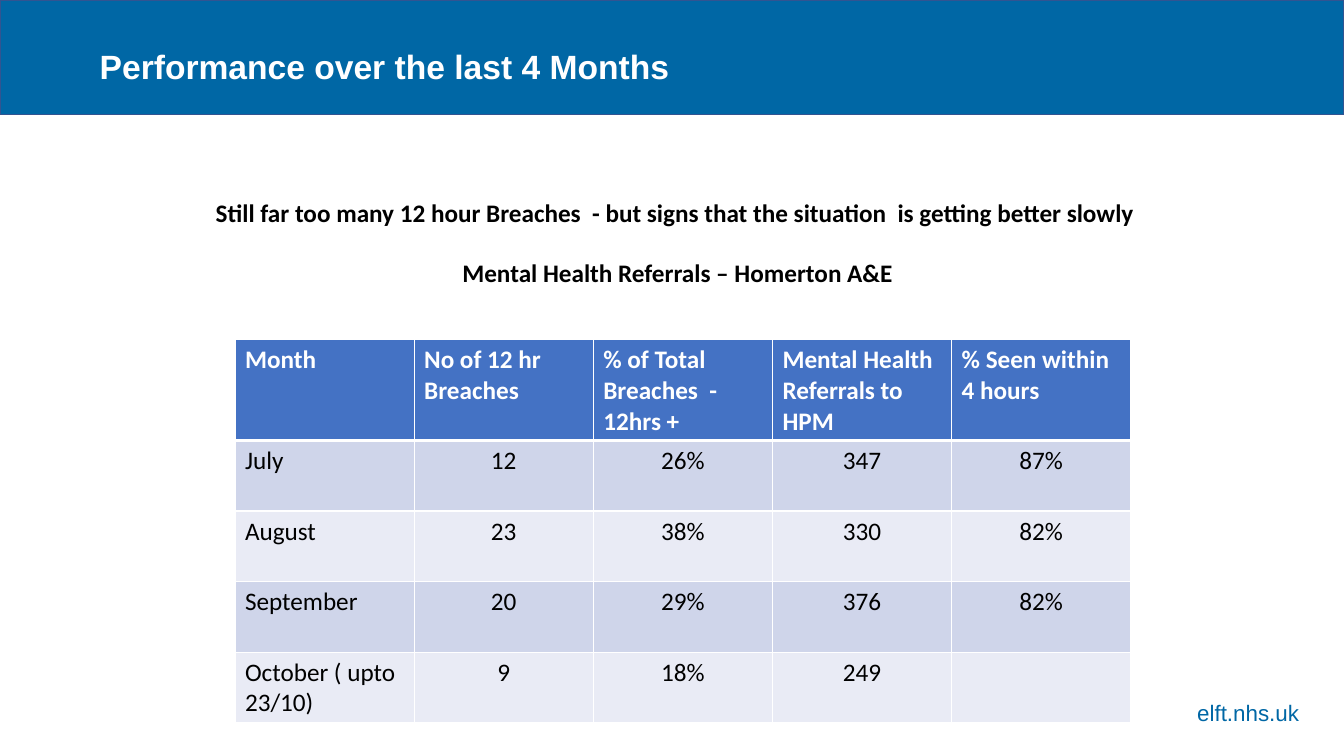
from lxml import etree
from pptx import Presentation
from pptx.dml.color import RGBColor
from pptx.enum.shapes import MSO_SHAPE
from pptx.enum.text import MSO_ANCHOR, PP_ALIGN
from pptx.oxml.ns import qn
from pptx.util import Pt

RECT = MSO_SHAPE.RECTANGLE
TOP = MSO_ANCHOR.TOP
LEFT, CENTER, RIGHT = PP_ALIGN.LEFT, PP_ALIGN.CENTER, PP_ALIGN.RIGHT

BLUE = RGBColor(0x00, 0x67, 0xA5)
BAND_EDGE = RGBColor(0x32, 0x54, 0x91)
HEADER_BLUE = RGBColor(0x44, 0x72, 0xC4)
ROW_FILLS = (RGBColor(0xCF, 0xD5, 0xEA), RGBColor(0xE9, 0xEB, 0xF5))
WHITE = RGBColor(0xFF, 0xFF, 0xFF)
BLACK = RGBColor(0x00, 0x00, 0x00)

SLIDE_W, SLIDE_H = 960, 540
COL_W, HEADER_H, ROW_H = 128, 72, 50.4
ROWS = [
    ("Month", "No of 12 hr Breaches", "% of Total Breaches  - 12hrs +",
     "Mental Health Referrals to HPM", "% Seen within 4 hours"),
    ("July", "12", "26%", "347", "87%"),
    ("August", "23", "38%", "330", "82%"),
    ("September", "20", "29%", "376", "82%"),
    ("October ( upto 23/10)", "9", "18%", "249", ""),
]


def write(p, text, size, color, font="Calibri", bold=False, align=LEFT):
    p.alignment = align
    r = p.add_run()
    r.text = text
    r.font.name = font
    r.font.size = Pt(size)
    r.font.bold = bold
    r.font.color.rgb = color


def add_band(slide):
    """Add the blue header band behind everything else."""
    sp = slide.shapes.add_shape(RECT, 0, 0, Pt(SLIDE_W), Pt(82))
    sp.shadow.inherit = False
    sp.fill.solid()
    sp.fill.fore_color.rgb = BLUE
    sp.line.color.rgb = BAND_EDGE
    sp.line.width = Pt(1)
    slide.shapes._spTree.insert(2, sp._element)


def set_title(slide, text):
    title = slide.shapes.title
    title.left, title.top, title.width, title.height = Pt(64), Pt(29.5), Pt(502), Pt(50.4)
    tf = title.text_frame
    tf.vertical_anchor = TOP
    write(tf.paragraphs[0], text, 24, WHITE, "Arial", True)


def add_text_box(slide, x, y, w, h):
    tf = slide.shapes.add_textbox(Pt(x), Pt(y), Pt(w), Pt(h)).text_frame
    tf.word_wrap = True
    return tf


def set_borders(cell, top, bottom):
    """Give a cell white borders, 1 point wide at the sides."""
    tc_pr = cell._tc.get_or_add_tcPr()
    for tag, width in (("a:lnL", 1), ("a:lnR", 1), ("a:lnT", top), ("a:lnB", bottom)):
        ln = etree.SubElement(tc_pr, qn(tag), w=str(Pt(width)))
        fill = etree.SubElement(ln, qn("a:solidFill"))
        etree.SubElement(fill, qn("a:srgbClr"), val=str(WHITE))


def add_referrals_table(slide, x, y):
    n_cols = len(ROWS[0])
    height = HEADER_H + ROW_H * (len(ROWS) - 1)
    frame = slide.shapes.add_table(len(ROWS), n_cols, Pt(x), Pt(y),
                                   Pt(COL_W * n_cols), Pt(height))
    table = frame.table
    for col in table.columns:
        col.width = Pt(COL_W)
    for i, texts in enumerate(ROWS):
        header = i == 0
        table.rows[i].height = Pt(HEADER_H if header else ROW_H)
        for j, text in enumerate(texts):
            cell = table.cell(i, j)
            set_borders(cell, 3 if i == 1 else 1, 3 if header else 1)
            cell.fill.solid()
            cell.fill.fore_color.rgb = HEADER_BLUE if header else ROW_FILLS[(i - 1) % 2]
            if text:
                write(cell.text_frame.paragraphs[0], text, 18,
                      WHITE if header else BLACK, bold=header,
                      align=LEFT if header or j == 0 else CENTER)


def main():
    prs = Presentation()
    prs.slide_width, prs.slide_height = Pt(SLIDE_W), Pt(SLIDE_H)
    slide = prs.slides.add_slide(prs.slide_layouts[5])

    add_band(slide)
    set_title(slide, "Performance over the last 4 Months")

    tf = add_text_box(slide, 147, 137.5, 674, 72.7)
    write(tf.paragraphs[0], "Still far too many 12 hour Breaches  - but signs that "
          "the situation  is getting better slowly", 18, BLACK, bold=True)
    p = tf.add_paragraph()
    p.space_before = Pt(21)
    write(p, "Mental Health Referrals – Homerton A&E", 18, BLACK, bold=True, align=CENTER)

    add_referrals_table(slide, 167.8, 242.6)

    tf = add_text_box(slide, 804, 496, 131, 26.6)
    write(tf.paragraphs[0], "elft.nhs.uk", 16, BLUE, "Arial", align=RIGHT)

    prs.save("out.pptx")


if __name__ == "__main__":
    main()
